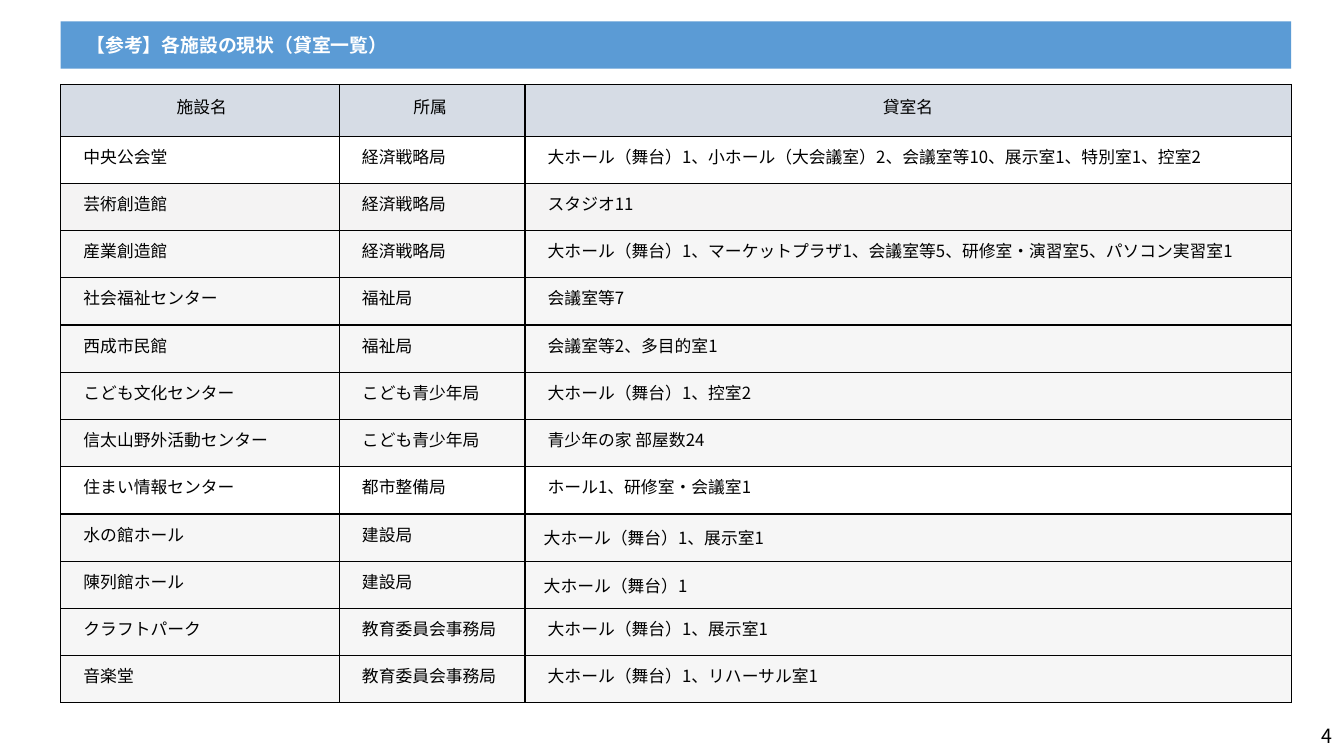
from lxml.etree import SubElement
from pptx import Presentation
from pptx.dml.color import RGBColor
from pptx.enum.shapes import MSO_SHAPE
from pptx.enum.text import MSO_ANCHOR, PP_ALIGN
from pptx.oxml import parse_xml
from pptx.oxml.ns import nsdecls, qn
from pptx.util import Cm, Pt

FONT = "Noto Sans CJK JP"
BLACK = RGBColor(0x00, 0x00, 0x00)
WHITE = RGBColor(0xFF, 0xFF, 0xFF)
BLUE = RGBColor(0x5B, 0x9B, 0xD5)
HEADER_FILL = RGBColor(0xD6, 0xDC, 0xE5)
WARM_GRAY = RGBColor(0xE7, 0xE6, 0xE6)
GRAY = RGBColor(0xED, 0xED, 0xED)

TITLE = "【参考】各施設の現状（貸室一覧）"
PAGE_NUMBER = "4"
HEADER = (" 施設名", "所属 ", "貸室名")
FACILITIES = [
    ("中央公会堂", "経済戦略局",
     "大ホール（舞台）1、小ホール（大会議室）2、会議室等10、展示室1、特別室1、控室2"),
    ("芸術創造館", "経済戦略局", "スタジオ11"),
    ("産業創造館", "経済戦略局",
     "大ホール（舞台）1、マーケットプラザ1、会議室等5、研修室・演習室5、パソコン実習室1"),
    ("社会福祉センター", "福祉局", "会議室等7"),
    ("西成市民館", "福祉局", "会議室等2、多目的室1"),
    ("こども文化センター", "こども青少年局", "大ホール（舞台）1、控室2"),
    ("信太山野外活動センター", "こども青少年局", "青少年の家 部屋数24"),
    ("住まい情報センター", "都市整備局", "ホール1、研修室・会議室1"),
    ("水の館ホール", "建設局", "大ホール（舞台）1、展示室1"),
    ("陳列館ホール", "建設局", "大ホール（舞台）1"),
    ("クラフトパーク", "教育委員会事務局", "大ホール（舞台）1、展示室1"),
    ("音楽堂", "教育委員会事務局", "大ホール（舞台）1、リハーサル室1"),
]
ROW_FILLS = {1: None, 2: WARM_GRAY, 8: None}  # all other rows are GRAY
LOOSE_ROWS = (9, 10)  # room names with single spacing and narrow margins
INDENT = "　"

LEFT, WIDTH = Cm(1.53), Cm(31.01)
COLUMN_WIDTHS = (Cm(7.02), Cm(4.68), Cm(19.31))
HEADER_HEIGHT, ROW_HEIGHT = Cm(1.3), Cm(1.19)


def set_text(tf, text, size=12, color=BLACK, bold=False, align=PP_ALIGN.LEFT,
             spacing=None):
    tf.word_wrap = True
    p = tf.paragraphs[0]
    p.alignment = align
    p.line_spacing = spacing
    r = p.add_run()
    r.text = text
    r.font.size, r.font.bold, r.font.name = Pt(size), bold, FONT
    r.font.color.rgb = color
    SubElement(r.font._element, qn("a:ea"), typeface=FONT)


def set_fill(cell, color, alpha=None):
    if color is None:
        cell.fill.background()
        return
    cell.fill.solid()
    cell.fill.fore_color.rgb = color
    if alpha:
        clr = cell._tc.tcPr.find(".//" + qn("a:srgbClr"))
        SubElement(clr, qn("a:alpha"), val=str(alpha * 1000))


def set_borders(cell):
    for i, side in enumerate("LRTB"):
        cell._tc.tcPr.insert(i, parse_xml(
            f'<a:ln{side} {nsdecls("a")} w="{Pt(1)}"><a:solidFill>'
            f'<a:srgbClr val="{BLACK}"/></a:solidFill></a:ln{side}>'))


def add_title(slide):
    sp = slide.shapes.add_shape(MSO_SHAPE.RECTANGLE, LEFT, Cm(0.54), WIDTH, Cm(1.19))
    sp.shadow.inherit = False
    sp.fill.solid()
    sp.fill.fore_color.rgb = BLUE
    sp.line.fill.background()
    tf = sp.text_frame
    tf.vertical_anchor = MSO_ANCHOR.MIDDLE
    tf.margin_left = tf.margin_right = Cm(0.18)
    tf.margin_top = tf.margin_bottom = Cm(0.1)
    set_text(tf, INDENT + TITLE, size=13.5, color=WHITE, bold=True)


def add_facility_table(slide):
    rows = [HEADER] + FACILITIES
    height = HEADER_HEIGHT + ROW_HEIGHT * len(FACILITIES)
    table = slide.shapes.add_table(len(rows), len(HEADER), LEFT, Cm(2.13),
                                   WIDTH, height).table
    for column, width in zip(table.columns, COLUMN_WIDTHS):
        column.width = width
    for i, row in enumerate(rows):
        table.rows[i].height = ROW_HEIGHT if i else HEADER_HEIGHT
        for j, text in enumerate(row):
            cell = table.cell(i, j)
            loose = i in LOOSE_ROWS and j == 2
            cell.vertical_anchor = MSO_ANCHOR.MIDDLE
            cell.margin_left = cell.margin_right = Cm(0.05 if loose else 0.15)
            cell.margin_top = cell.margin_bottom = 0
            if i == 0:
                align = PP_ALIGN.CENTER
                set_fill(cell, HEADER_FILL)
            else:
                align = PP_ALIGN.LEFT if j else PP_ALIGN.JUSTIFY
                text = INDENT + text
                set_fill(cell, ROW_FILLS.get(i, GRAY), alpha=45)
            set_text(cell.text_frame, text, align=align,
                     spacing=None if loose else Pt(12))
            set_borders(cell)


def add_page_number(slide):
    sp = slide.shapes.add_textbox(Cm(32.18), Cm(18.03), Cm(1.65), Cm(1.02))
    sp.text_frame.vertical_anchor = MSO_ANCHOR.MIDDLE
    set_text(sp.text_frame, PAGE_NUMBER, size=14, align=PP_ALIGN.RIGHT)


def main():
    prs = Presentation()
    prs.slide_width, prs.slide_height = Cm(33.87), Cm(19.05)
    slide = prs.slides.add_slide(prs.slide_layouts[6])
    add_title(slide)
    add_facility_table(slide)
    add_page_number(slide)
    prs.save("out.pptx")


if __name__ == "__main__":
    main()
